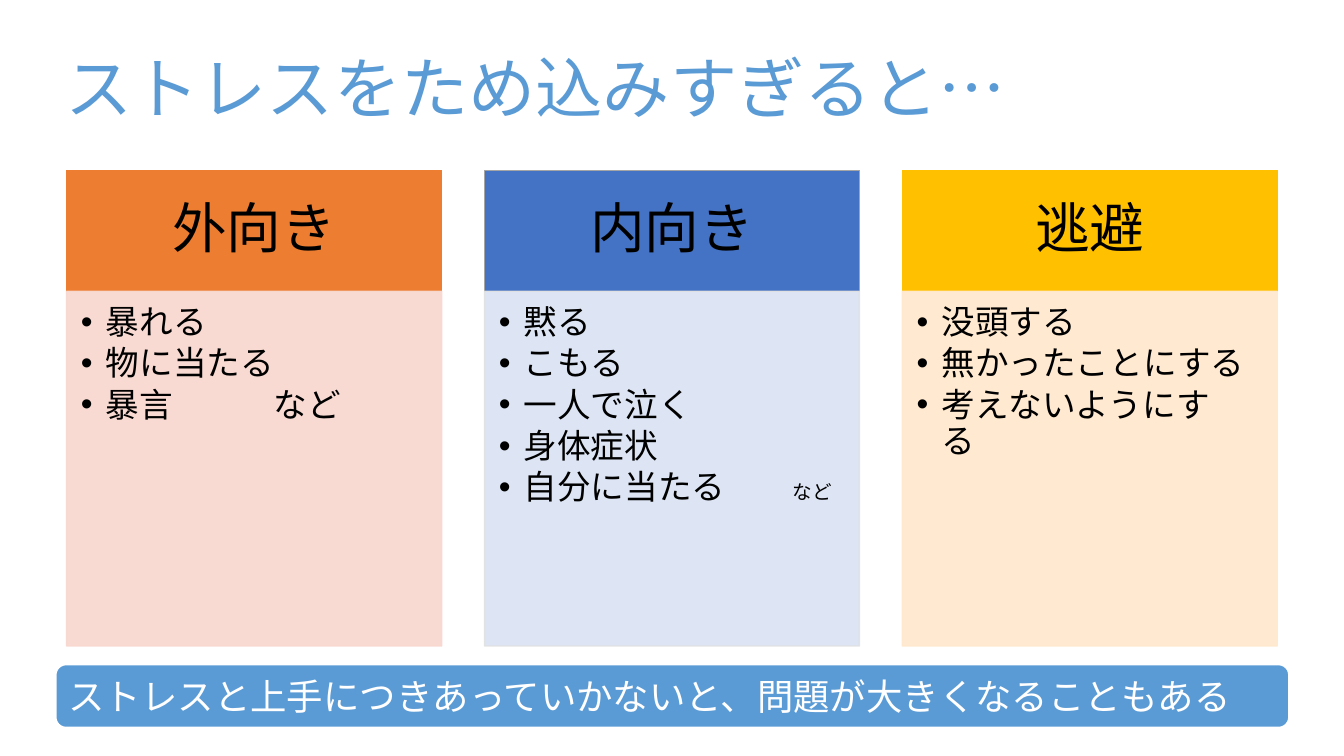
from lxml import etree
from pptx import Presentation
from pptx import util as u
from pptx.dml.color import RGBColor
from pptx.enum import shapes, text
from pptx.oxml.ns import qn

# Content: an item is plain text, or (text, gap in characters, size of the closing word)
TITLE = "ストレスをため込みすぎると…"
MESSAGE = "ストレスと上手につきあっていかないと、問題が大きくなることもある"
ETC = "など"
WIDE_SPACE = "　"
COLUMNS = [
    {"head": "外向き", "colors": ("ED7D31", "ED7D31", "F8D7CE", "F8D7CE"),
     "items": ["暴れる", "物に当たる", ("暴言", 3, "item")]},
    {"head": "内向き", "colors": ("4472C4", "A5A5A5", "DAE3F3", "E1E1E1"),
     "items": ["黙る", "こもる", "一人で泣く", "身体症状", ("自分に当たる", 2, "small")]},
    {"head": "逃避", "colors": ("FFC000", "FFC000", "FFE8CC", "FFE8CC"),
     "items": ["没頭する", "無かったことにする", "考えないようにす\vる"]},
]

THEME = {
    "blue": "5B9BD5", "white": "FFFFFF", "black": "000000",
    "cjk": "Noto Sans CJK JP", "body": "Arial",
    "title": 48, "head": 39, "item": 24, "small": 14, "message": 26,
}

# Layout in centimetres
LEFT, PITCH, CARD_W = 1.68, 10.53, 9.45
HEAD_Y, HEAD_H, BODY_H = 4.29, 3.05, 8.94
INDENT = 0.63


def box(left, top, width, height):
    return [u.Cm(v) for v in (left, top, width, height)]


def style_frame(tf, anchor, insets):
    sides = ("margin_left", "margin_top", "margin_right", "margin_bottom")
    fmt = {"word_wrap": True, "vertical_anchor": anchor,
           "auto_size": text.MSO_AUTO_SIZE.NONE}
    fmt.update(zip(sides, (u.Cm(v) for v in insets)))
    for name, value in fmt.items():
        setattr(tf, name, value)
    return tf


def style_paragraph(p, align=text.PP_ALIGN.LEFT, spacing=0.9, after=0):
    fmt = {"alignment": align, "line_spacing": spacing,
           "space_before": u.Pt(0), "space_after": u.Pt(after)}
    for name, value in fmt.items():
        setattr(p, name, value)
    return p


def add_run(p, words, size, color="black", font="cjk"):
    r = p.add_run()
    r.text = words
    for name, value in {"size": u.Pt(THEME[size]), "name": THEME[font]}.items():
        setattr(r.font, name, value)
    r.font.color.rgb = RGBColor.from_string(THEME[color])
    etree.SubElement(r._r.get_or_add_rPr(), qn("a:ea"), typeface=THEME[font])
    return r


def add_panel(slide, kind, area, fill, line, line_width=1, alpha=None):
    sp = slide.shapes.add_shape(kind, *area)
    sp.shadow.inherit = False
    sp.fill.solid()
    sp.fill.fore_color.rgb = RGBColor.from_string(fill)
    sp.line.color.rgb = RGBColor.from_string(line)
    sp.line.width = u.Pt(line_width)
    if alpha:
        for clr in sp._element.spPr.iter(qn("a:srgbClr")):
            etree.SubElement(clr, qn("a:alpha"), val=str(alpha * 1000))
    return sp


def add_bullet(p):
    pPr = p._p.get_or_add_pPr()
    pPr.set("marL", str(u.Cm(INDENT)))
    pPr.set("indent", str(-u.Cm(INDENT)))
    etree.SubElement(pPr, qn("a:buFont"), typeface=THEME["body"])
    etree.SubElement(pPr, qn("a:buChar"), char="•")


def add_item(p, item):
    style_paragraph(p, after=0.15 * THEME["item"])
    add_bullet(p)
    words, gap, etc_size = item if isinstance(item, tuple) else (item, 0, None)
    for i, line in enumerate(words.split("\v")):
        if i:
            p.add_line_break()
        add_run(p, line, "item", font="body")
    if gap:
        # One wide space, stretched by character spacing
        space = add_run(p, WIDE_SPACE, "item", font="body")
        space._r.get_or_add_rPr().set("spc", str((gap - 1) * THEME["item"] * 100))
        add_run(p, ETC, etc_size, font="body")


def add_card(slide, left, column):
    head_fill, head_line, body_fill, body_line = column["colors"]
    rect = shapes.MSO_SHAPE.RECTANGLE
    # Header
    sp = add_panel(slide, rect, box(left, HEAD_Y, CARD_W, HEAD_H), head_fill, head_line)
    tf = style_frame(sp.text_frame, text.MSO_ANCHOR.MIDDLE, (0.76, 0.43, 0.76, 0.43))
    p = style_paragraph(tf.paragraphs[0], text.PP_ALIGN.CENTER)
    add_run(p, column["head"], "head")
    # Bulleted body
    sp = add_panel(slide, rect, box(left, HEAD_Y + HEAD_H, CARD_W, BODY_H),
                   body_fill, body_line, alpha=90)
    tf = style_frame(sp.text_frame, text.MSO_ANCHOR.TOP, (0.36, 0.36, 0.48, 0.53))
    for i, item in enumerate(column["items"]):
        add_item(tf.add_paragraph() if i else tf.paragraphs[0], item)


def main():
    prs = Presentation()
    prs.slide_width, prs.slide_height = u.Cm(33.87), u.Cm(19.05)
    slide = prs.slides.add_slide(prs.slide_layouts[6])
    insets = (0.25, 0.13, 0.25, 0.13)

    # Title
    sp = slide.shapes.add_textbox(*box(1.4, 0.48, 29.21, 3.68))
    tf = style_frame(sp.text_frame, text.MSO_ANCHOR.MIDDLE, insets)
    add_run(style_paragraph(tf.paragraphs[0]), TITLE, "title", "blue")

    # Three cards
    for i, column in enumerate(COLUMNS):
        add_card(slide, LEFT + i * PITCH, column)

    # Message bar, sized so the sentence stays on one line
    sp = add_panel(slide, shapes.MSO_SHAPE.ROUNDED_RECTANGLE,
                   box(1.4, 16.74, 31.09, 1.6), THEME["blue"], THEME["white"], 1.5)
    tf = style_frame(sp.text_frame, text.MSO_ANCHOR.MIDDLE, insets)
    add_run(style_paragraph(tf.paragraphs[0], spacing=1.0), MESSAGE, "message", "white")

    prs.save("out.pptx")


if __name__ == "__main__":
    main()
